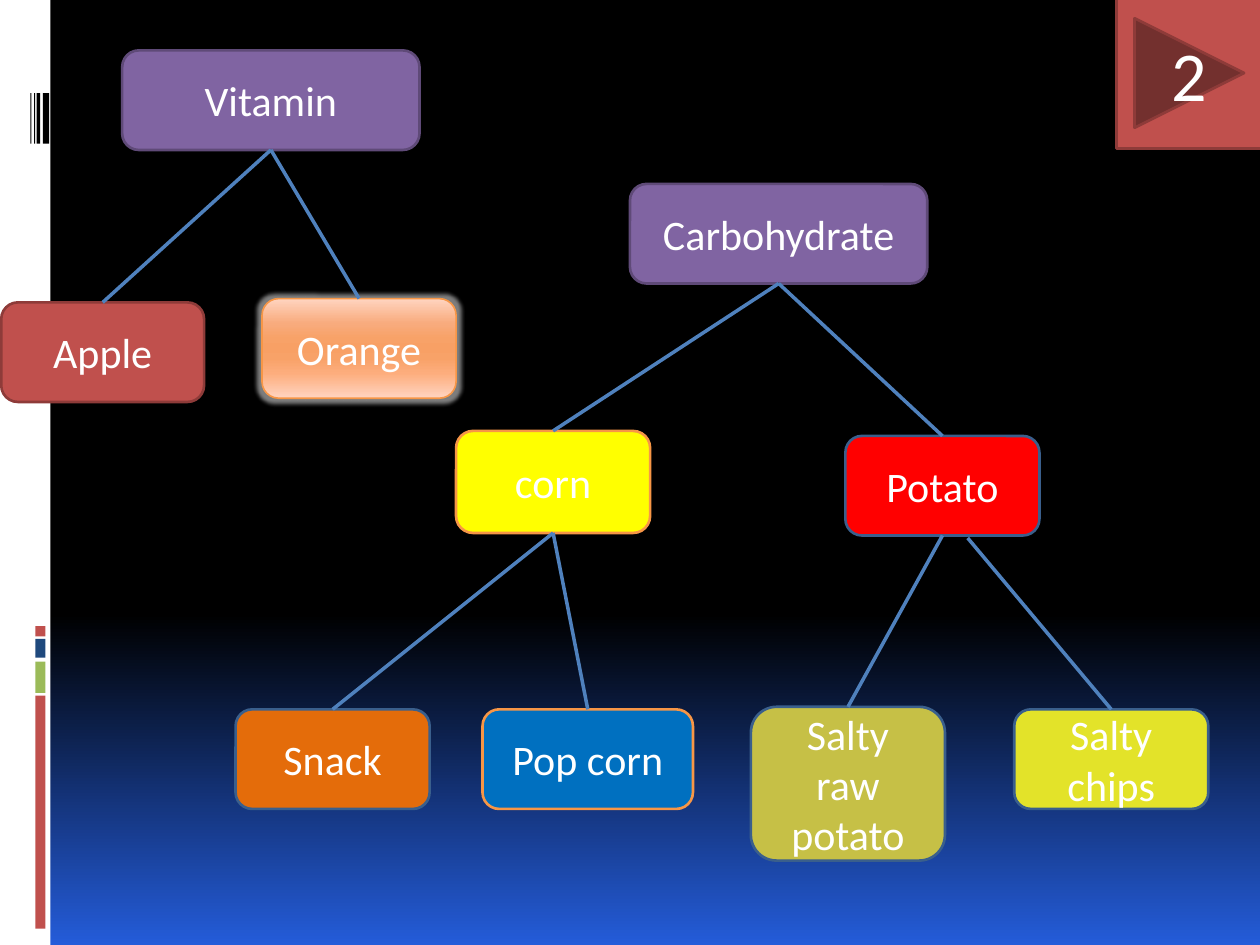
"""Builds a slide with two food trees, for vitamin and carbohydrate."""
from dataclasses import dataclass
from typing import Optional

from lxml.etree import SubElement
from pptx import Presentation
from pptx.dml.color import RGBColor
from pptx.enum.shapes import MSO_CONNECTOR, MSO_SHAPE
from pptx.enum.text import MSO_ANCHOR, PP_ALIGN
from pptx.oxml.ns import qn
from pptx.util import Inches, Pt

ROUNDED = MSO_SHAPE.ROUNDED_RECTANGLE
RECTANGLE = MSO_SHAPE.RECTANGLE
NEXT_BUTTON = MSO_SHAPE.ACTION_BUTTON_FORWARD_OR_NEXT
STRAIGHT = MSO_CONNECTOR.STRAIGHT
MIDDLE = MSO_ANCHOR.MIDDLE
CENTER = PP_ALIGN.CENTER
TOP, BOTTOM = 0, 2

WHITE = RGBColor(0xFF, 0xFF, 0xFF)
BLACK = RGBColor(0x00, 0x00, 0x00)
ROYAL_BLUE = RGBColor(0x24, 0x5C, 0xD9)
BRICK = RGBColor(0xC0, 0x50, 0x4D)
DARK_BRICK = RGBColor(0x8E, 0x3B, 0x39)
GREEN = RGBColor(0x9B, 0xBB, 0x59)
NAVY = RGBColor(0x1F, 0x49, 0x7D)
PURPLE = RGBColor(0x80, 0x64, 0xA2)
DARK_PURPLE = RGBColor(0x5F, 0x4A, 0x78)
ORANGE = RGBColor(0xF7, 0x96, 0x46)
BURNT_ORANGE = RGBColor(0xE4, 0x6C, 0x0A)
STEEL = RGBColor(0x3A, 0x5F, 0x8C)
LINK_BLUE = RGBColor(0x4F, 0x81, 0xBD)
YELLOW = RGBColor(0xFF, 0xFF, 0x00)
RED = RGBColor(0xFF, 0x00, 0x00)
LIME = RGBColor(0xE3, 0xE3, 0x29)
BLUE = RGBColor(0x00, 0x70, 0xC0)
OLIVE = RGBColor(0xC6, 0xC0, 0x46)
PEACH = RGBColor(0xFF, 0xD4, 0xC0)
APRICOT = RGBColor(0xF8, 0xA2, 0x68)

NIGHT_STOPS = [(0, BLACK), (65, BLACK), (100, ROYAL_BLUE)]
ORANGE_STOPS = [
    (0, PEACH), (25, RGBColor(0xF8, 0xAB, 0x7D)), (40, APRICOT),
    (50, RGBColor(0xF8, 0xA0, 0x65)), (60, APRICOT),
    (75, RGBColor(0xFD, 0xAD, 0x7D)), (100, PEACH),
]


@dataclass
class Bar:
    left: float
    top: float
    width: float
    height: float
    color: RGBColor


@dataclass
class Node:
    label: str
    left: float
    top: float
    fill: RGBColor
    line: RGBColor
    width: float = 1.54
    height: float = 0.79


@dataclass
class Link:
    parent: str
    child: str
    start: Optional[tuple[float, float]] = None


BARS = [
    Bar(0, 0, 0.4, 7.5, WHITE),
    Bar(0.28, 5.52, 0.08, 1.85, BRICK),
    Bar(0.28, 5.25, 0.08, 0.25, GREEN),
    Bar(0.28, 5.07, 0.08, 0.15, NAVY),
    Bar(0.28, 4.97, 0.08, 0.08, BRICK),
] + [
    Bar(left, 0.74, width, 0.4, BLACK)
    for left, width in ((0.34, 0.05), (0.29, 0.03), (0.27, 0.01), (0.24, 0.01))
]

NODES = [
    Node("Orange", 2.08, 2.37, APRICOT, ORANGE),
    Node("Carbohydrate", 5, 1.46, PURPLE, DARK_PURPLE, width=2.36),
    Node("Apple", 0.01, 2.4, BRICK, DARK_BRICK, width=1.61),
    Node("corn", 3.62, 3.42, YELLOW, ORANGE, height=0.81),
    Node("Potato", 6.71, 3.46, RED, STEEL),
    Node("Salty chips", 8.05, 5.63, LIME, STEEL),
    Node("Snack", 1.87, 5.63, BURNT_ORANGE, STEEL),
    Node("Pop corn", 3.83, 5.63, BLUE, ORANGE, width=1.67),
    Node("Salty raw potato", 5.96, 5.61, OLIVE, STEEL, height=1.22),
    Node("Vitamin", 0.97, 0.4, PURPLE, DARK_PURPLE, width=2.36),
]

LINKS = [
    Link("Vitamin", "Apple"),
    Link("Vitamin", "Orange"),
    Link("Carbohydrate", "Potato"),
    Link("Carbohydrate", "corn"),
    Link("corn", "Snack"),
    Link("corn", "Pop corn"),
    Link("Potato", "Salty raw potato"),
    Link("Potato", "Salty chips", start=(7.68, 4.27)),
]


def set_gradient(fill, element, stops: list[tuple[int, RGBColor]]) -> None:
    """Give a fill a top-to-bottom gradient with the stops."""
    fill.gradient()
    fill.gradient_angle = 270
    stop_list = next(element.iter(qn("a:gsLst")))
    for old_stop in list(stop_list):
        stop_list.remove(old_stop)
    for percent, color in stops:
        stop = SubElement(stop_list, qn("a:gs"), pos=str(percent * 1000))
        SubElement(stop, qn("a:srgbClr"), val=str(color))


def add_glow(box) -> None:
    """Put a soft white glow around a box."""
    effects = next(box.element.iter(qn("a:effectLst")))
    glow = SubElement(effects, qn("a:glow"), rad=str(Pt(5)))
    color = SubElement(glow, qn("a:srgbClr"), val=str(WHITE))
    SubElement(color, qn("a:alpha"), val="50000")


def draw_bar(page, bar: Bar) -> None:
    """Draw one plain bar of the left margin."""
    box = page.shapes.add_shape(RECTANGLE, Inches(bar.left), Inches(bar.top),
                                Inches(bar.width), Inches(bar.height))
    box.shadow.inherit = False
    box.fill.solid()
    box.fill.fore_color.rgb = bar.color
    box.line.fill.background()


def draw_node(page, node: Node, preset=ROUNDED, size: float = 24, before: float = 4.8):
    """Draw one labelled box and return it."""
    box = page.shapes.add_shape(preset, Inches(node.left), Inches(node.top),
                                Inches(node.width), Inches(node.height))
    box.shadow.inherit = False
    box.fill.solid()
    box.fill.fore_color.rgb = node.fill
    box.line.color.rgb = node.line
    box.line.width = Pt(1.5)
    box.text_frame.text = node.label
    box.text_frame.word_wrap = True
    box.text_frame.vertical_anchor = MIDDLE
    para = box.text_frame.paragraphs[0]
    para.alignment = CENTER
    para.space_before = Pt(before)
    span = para.runs[0]
    span.font.name = "Calibri"
    span.font.size = Pt(size)
    span.font.color.rgb = WHITE
    return box


def draw_link(page, link: Link, boxes: dict) -> None:
    """Join the bottom of a parent box to the top of its child."""
    left, top = link.start or (0, 0)
    line = page.shapes.add_connector(STRAIGHT, Inches(left), Inches(top),
                                     Inches(left), Inches(top))
    if link.start is None:
        line.begin_connect(boxes[link.parent], BOTTOM)
    line.end_connect(boxes[link.child], TOP)
    line.line.color.rgb = LINK_BLUE
    line.line.width = Pt(2)
    SubElement(line.element.spPr, qn("a:effectLst"))


def main() -> None:
    """Build the slide and save it."""
    deck = Presentation()
    deck.slide_width, deck.slide_height = Inches(10), Inches(7.5)
    page = deck.slides.add_slide(deck.slide_layouts[6])
    set_gradient(page.background.fill, page.element, NIGHT_STOPS)
    for bar in BARS:
        draw_bar(page, bar)
    boxes = {node.label: draw_node(page, node) for node in NODES}
    orange = boxes["Orange"]
    set_gradient(orange.fill, orange.element, ORANGE_STOPS)
    orange.line.width = Pt(0.94)
    add_glow(orange)
    for link in LINKS:
        draw_link(page, link, boxes)
    button = Node("2", 8.86, -0.02, BRICK, DARK_BRICK, width=1.16, height=1.2)
    draw_node(page, button, NEXT_BUTTON, size=40, before=0)
    deck.save("out.pptx")


if __name__ == "__main__":
    main()
